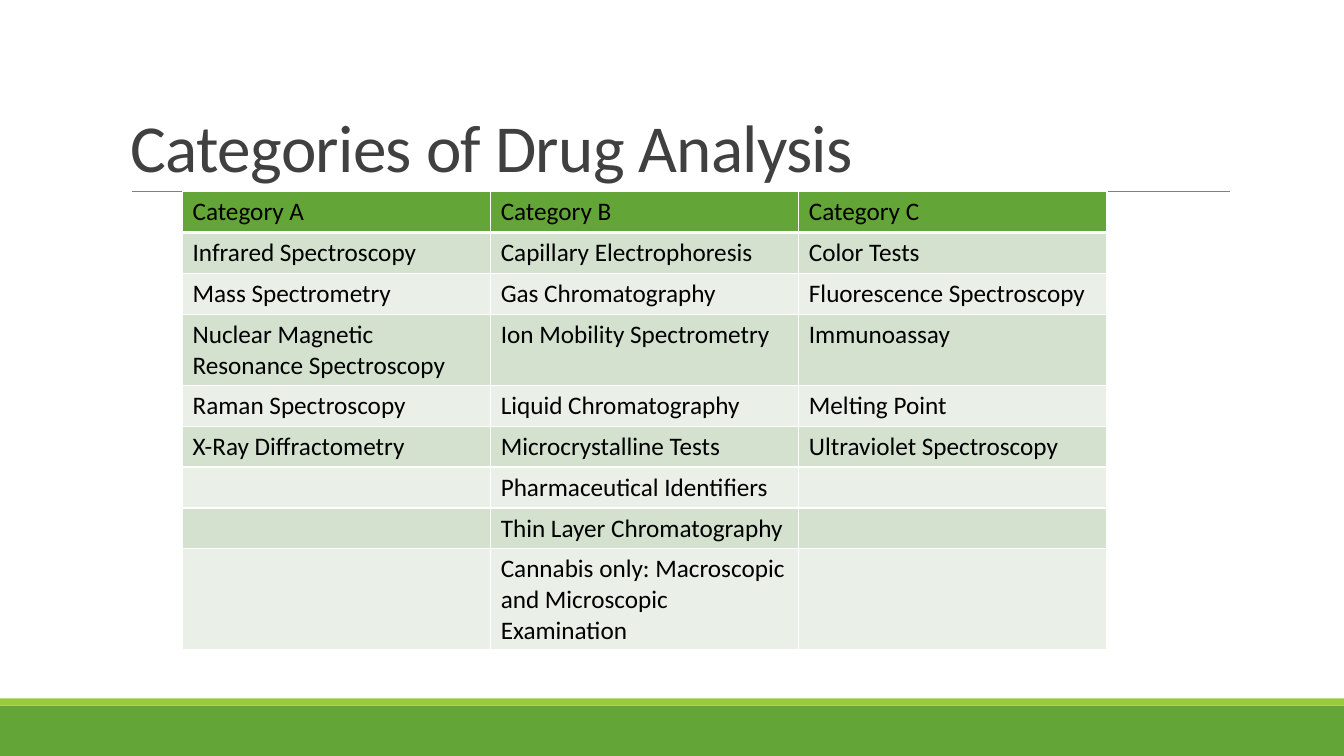
from lxml.etree import SubElement
from pptx import Presentation
from pptx.dml.color import RGBColor
from pptx.enum.shapes import MSO_CONNECTOR, MSO_SHAPE
from pptx.enum.text import MSO_ANCHOR
from pptx.oxml.ns import qn
from pptx.util import Cm, Pt

SLIDE_WIDTH, SLIDE_HEIGHT = 33.87, 19.05
FONT = "Calibri"
GREEN, LIME, WHITE = "63A537", "99CB38", "FFFFFF"
BANDS = ("D3E1CE", "EAF0E8")
LINE_HEIGHT, ROW_PADDING = 0.76, 0.27

# Each row: number of text lines it holds, then its three cells
CATEGORY_ROWS = [
    (1, "Category A", "Category B", "Category C"),
    (1, "Infrared Spectroscopy", "Capillary Electrophoresis", "Color Tests"),
    (1, "Mass Spectrometry", "Gas Chromatography", "Fluorescence Spectroscopy"),
    (2, "Nuclear Magnetic Resonance Spectroscopy", "Ion Mobility Spectrometry", "Immunoassay"),
    (1, "Raman Spectroscopy", "Liquid Chromatography", "Melting Point"),
    (1, "X-Ray Diffractometry", "Microcrystalline Tests", "Ultraviolet Spectroscopy"),
    (1, "", "Pharmaceutical Identifiers", ""),
    (1, "", "Thin Layer Chromatography", ""),
    (3, "", "Cannabis only: Macroscopic and Microscopic Examination", ""),
]


def color(hex_string):
    return RGBColor.from_string(hex_string)


def add_run(paragraph, text, size, hex_string):
    run = paragraph.add_run()
    run.text = text
    run.font.name = FONT
    run.font.size = Pt(size)
    run.font.bold = False
    run.font.color.rgb = color(hex_string)
    return run


def add_footer_bands(slide, left, top, width, height):
    """Draw a thin lime stripe above a green band."""
    stripe = 0.18
    bands = ((GREEN, top + stripe, height - stripe), (LIME, top, stripe))
    for fill, band_top, band_height in bands:
        band = slide.shapes.add_shape(
            MSO_SHAPE.RECTANGLE, Cm(left), Cm(band_top), Cm(width), Cm(band_height))
        band.shadow.inherit = False
        band.fill.solid()
        band.fill.fore_color.rgb = color(fill)
        band.line.fill.background()


def add_title(slide, left, top, width, height):
    """Place the title at the bottom of its box, with a rule under it."""
    bottom, inset = top + height, 0.28
    rule = slide.shapes.add_connector(
        MSO_CONNECTOR.STRAIGHT, Cm(left + inset), Cm(bottom),
        Cm(left + width), Cm(bottom))
    rule.line.color.rgb = color("808080")
    rule.line.width = Pt(0.5)
    SubElement(rule._element.spPr, qn("a:effectLst"))

    title = slide.shapes.add_textbox(Cm(left), Cm(top), Cm(width), Cm(height))
    frame = title.text_frame
    frame.word_wrap = True
    frame.vertical_anchor = MSO_ANCHOR.BOTTOM
    paragraph = frame.paragraphs[0]
    paragraph.line_spacing = 0.85
    run = add_run(paragraph, "Categories of Drug Analysis", 48, "404040")
    run.font._element.set("spc", "-50")


def set_borders(cell, bottom_width):
    properties = cell._tc.get_or_add_tcPr()
    widths = (("a:lnL", 1), ("a:lnR", 1), ("a:lnT", 1), ("a:lnB", bottom_width))
    for position, (tag, width) in enumerate(widths):
        border = SubElement(properties, qn(tag), w=str(Pt(width)))
        fill = SubElement(border, qn("a:solidFill"))
        SubElement(fill, qn("a:srgbClr"), val=WHITE)
        properties.insert(position, border)


def add_category_table(slide, left, top, width):
    heights = [lines * LINE_HEIGHT + ROW_PADDING for lines, *_ in CATEGORY_ROWS]
    columns = len(CATEGORY_ROWS[0]) - 1
    table = slide.shapes.add_table(
        len(CATEGORY_ROWS), columns,
        Cm(left), Cm(top), Cm(width), Cm(sum(heights))).table
    table.first_row = False
    table.horz_banding = False
    for column in table.columns:
        column.width = Cm(width / columns)
    for row_index, (_, *texts) in enumerate(CATEGORY_ROWS):
        table.rows[row_index].height = Cm(heights[row_index])
        is_header = row_index == 0
        for column_index, text in enumerate(texts):
            cell = table.cell(row_index, column_index)
            cell.fill.solid()
            cell.fill.fore_color.rgb = color(
                GREEN if is_header else BANDS[(row_index - 1) % 2])
            set_borders(cell, 3 if is_header else 1)
            if text:
                add_run(cell.text_frame.paragraphs[0], text, 18, "000000")


def main():
    presentation = Presentation()
    presentation.slide_width = Cm(SLIDE_WIDTH)
    presentation.slide_height = Cm(SLIDE_HEIGHT)
    slide = presentation.slides.add_slide(presentation.slide_layouts[6])
    add_footer_bands(slide, 0, 17.6, SLIDE_WIDTH, SLIDE_HEIGHT - 17.6)
    add_title(slide, 3.05, 0.79, 27.94, 4.04)
    add_category_table(slide, 4.6, 4.83, 23.3)
    presentation.save("out.pptx")


if __name__ == "__main__":
    main()
